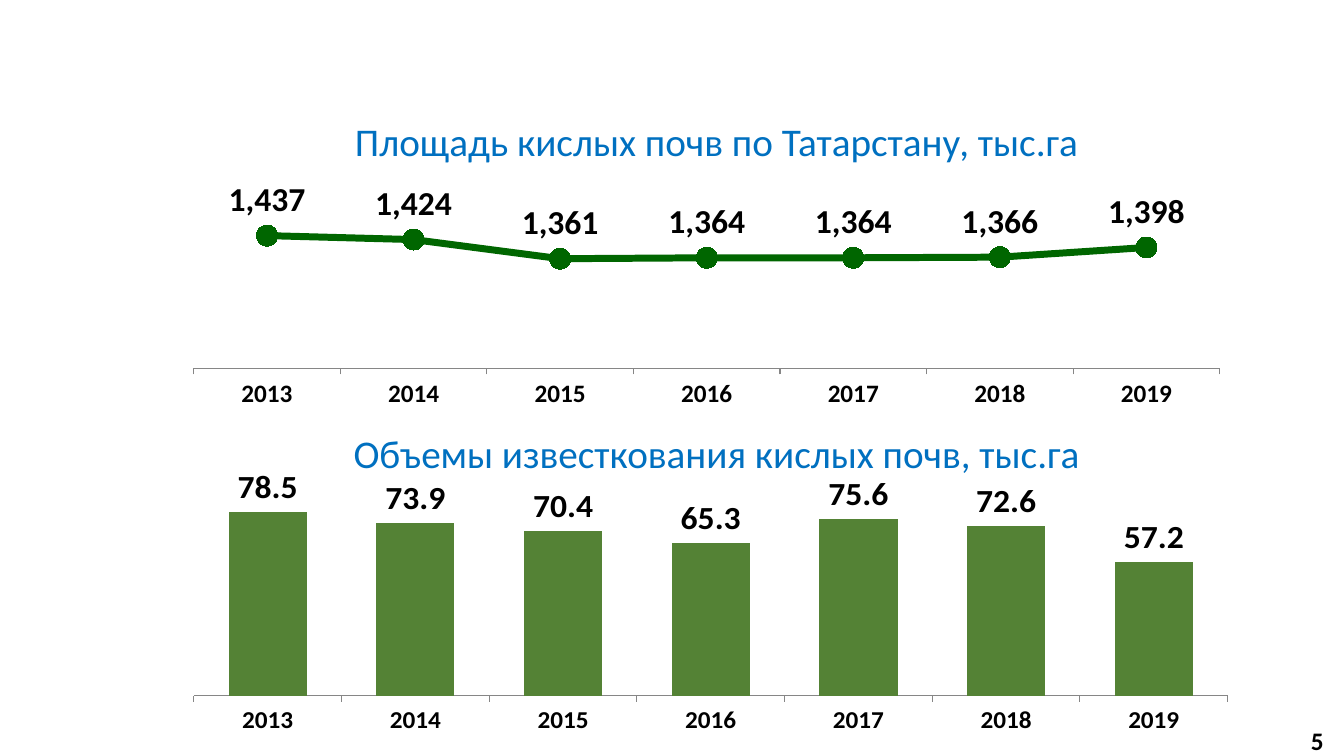
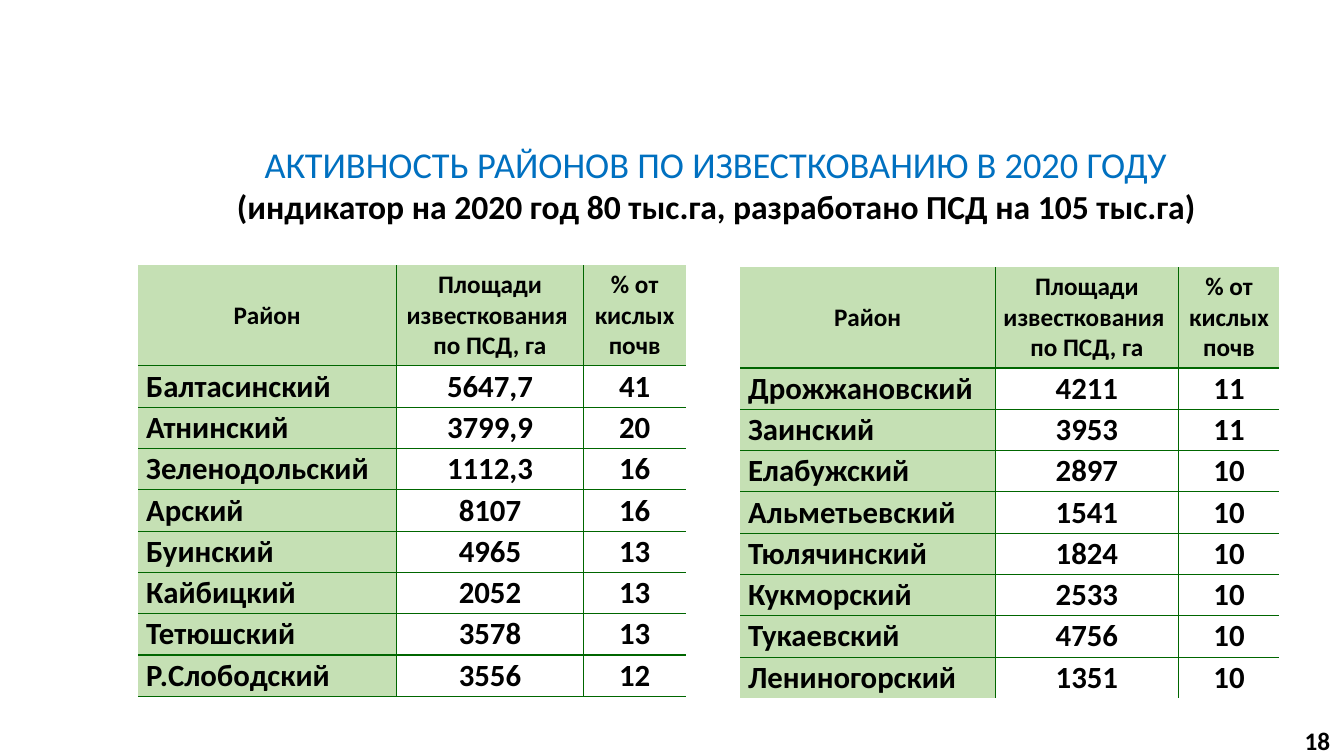
from lxml import etree
from pptx import Presentation
from pptx import util as u
from pptx.chart import data as chartdata
from pptx.dml import color
from pptx.enum import chart as charts, shapes, text
from pptx.oxml import ns

# Shared style
FONT = "Calibri"
BLACK = color.RGBColor(0x00, 0x00, 0x00)
BLUE = color.RGBColor(0x00, 0x70, 0xC0)
DARK_GREEN = color.RGBColor(0x00, 0x66, 0x00)
BAR_GREEN = color.RGBColor(0x54, 0x82, 0x35)
PALE_GREEN = color.RGBColor(0xC5, 0xE0, 0xB4)
AXIS_GRAY = color.RGBColor(0x86, 0x86, 0x86)
CENTER, LEFT = text.PP_ALIGN.CENTER, text.PP_ALIGN.LEFT
MIDDLE = text.MSO_ANCHOR.MIDDLE

# Content
YEARS = [str(year) for year in range(2013, 2020)]
ACID_AREAS = [1437, 1424, 1361, 1364, 1364, 1366, 1398]
LIMED_AREAS = [78.5, 73.9, 70.4, 65.3, 75.6, 72.6, 57.2]
HEADER = ("Район", "Площади известкования \vпо ПСД, га", "% от кислых почв")
LEADING_DISTRICTS = [
    ("Балтасинский", "5647,7", "41"),
    ("Атнинский", "3799,9", "20"),
    ("Зеленодольский", "1112,3", "16"),
    ("Арский", "8107", "16"),
    ("Буинский", "4965", "13"),
    ("Кайбицкий", "2052", "13"),
    ("Тетюшский", "3578", "13"),
    ("Р.Слободский", "3556", "12"),
]
OTHER_DISTRICTS = [
    ("Дрожжановский", "4211", "11"),
    ("Заинский", "3953", "11"),
    ("Елабужский", "2897", "10"),
    ("Альметьевский", "1541", "10"),
    ("Тюлячинский", "1824", "10"),
    ("Кукморский", "2533", "10"),
    ("Тукаевский", "4756", "10"),
    ("Лениногорский", "1351", "10"),
]


def style_font(font, size, tint=BLACK, bold=True):
    font.name, font.size, font.bold = FONT, u.Pt(size), bold
    font.color.rgb = tint


def write(para, words, size=18, tint=BLACK, bold=True, align=CENTER):
    para.text = words
    para.alignment = align
    for span in para.runs:
        style_font(span.font, size, tint, bold)


def set_insets(target, left, top, right, bottom):
    target.margin_left, target.margin_top = u.Inches(left), u.Inches(top)
    target.margin_right, target.margin_bottom = u.Inches(right), u.Inches(bottom)


def set_border(cell, side, drawn):
    properties = cell._tc.get_or_add_tcPr()
    line = etree.SubElement(properties, ns.qn("a:ln" + side), w=str(u.Pt(1)))
    if drawn:
        fill = etree.SubElement(line, ns.qn("a:solidFill"))
        etree.SubElement(fill, ns.qn("a:srgbClr"), val=str(DARK_GREEN))
    else:
        etree.SubElement(line, ns.qn("a:noFill"))


class Report:
    def __init__(self):
        self.deck = Presentation()
        self.deck.slide_width = u.Inches(13.33)
        self.deck.slide_height = u.Inches(7.5)
        self.page = None

    def new_page(self):
        self.page = self.deck.slides.add_slide(self.deck.slide_layouts[6])

    def title(self, top, height, words, size=28, subtitle=None):
        box = self.page.shapes.add_textbox(
            u.Inches(0.88), u.Inches(top), u.Inches(12.45), u.Inches(height))
        frame = box.text_frame
        frame.word_wrap = True
        write(frame.paragraphs[0], words, size=size, tint=BLUE, bold=False)
        if subtitle:
            frame.vertical_anchor = MIDDLE
            set_insets(frame, 0.1, 0, 0.1, 0)
            write(frame.add_paragraph(), subtitle, size=24)

    def page_number(self, number):
        box = self.page.shapes.add_shape(
            shapes.MSO_SHAPE.ROUNDED_RECTANGLE,
            u.Inches(12.84), u.Inches(7.2), u.Inches(0.45), u.Inches(0.3))
        box.adjustments[0] = 0
        box.shadow.inherit = False
        box.fill.background()
        box.line.fill.background()
        frame = box.text_frame
        frame.word_wrap = True
        frame.vertical_anchor = MIDDLE
        set_insets(frame, 0, 0.05, 0, 0.05)
        write(frame.paragraphs[0], str(number))

    def yearly_chart(self, kind, top, width, height, values, number_format,
                     label_position, low, high):
        source = chartdata.CategoryChartData()
        source.categories = YEARS
        source.add_series("Series 1", values)
        chart = self.page.shapes.add_chart(
            kind, u.Inches(1.71), u.Inches(top), u.Inches(width),
            u.Inches(height), source).chart
        chart.has_title = chart.has_legend = False
        style_font(chart.font, 16)

        # Axes
        scale = chart.value_axis
        scale.visible = scale.has_major_gridlines = False
        scale.minimum_scale, scale.maximum_scale = low, high
        years = chart.category_axis
        years.major_tick_mark = charts.XL_TICK_MARK.OUTSIDE
        years.format.line.color.rgb = AXIS_GRAY
        style_font(years.tick_labels.font, 18)

        # Value labels
        plot = chart.plots[0]
        plot.vary_by_categories = False
        labels = plot.series[0].data_labels
        labels.show_value = True
        labels.number_format = number_format
        labels.number_format_is_linked = False
        labels.position = label_position
        style_font(labels.font, 24)
        return plot

    def column_chart(self, top, width, height, values):
        plot = self.yearly_chart(
            charts.XL_CHART_TYPE.COLUMN_CLUSTERED, top, width, height, values,
            "#,##0.0", charts.XL_LABEL_POSITION.OUTSIDE_END, 0, 90)
        plot.gap_width = 89
        fill = plot.series[0].format.fill
        fill.solid()
        fill.fore_color.rgb = BAR_GREEN

    def line_chart(self, top, width, height, values):
        plot = self.yearly_chart(
            charts.XL_CHART_TYPE.LINE_MARKERS, top, width, height, values,
            "#,##0", charts.XL_LABEL_POSITION.ABOVE, 1000, 1600)
        series = plot.series[0]
        series.smooth = False
        series.format.line.color.rgb = DARK_GREEN
        series.format.line.width = u.Pt(5)
        marker = series.marker
        marker.style, marker.size = charts.XL_MARKER_STYLE.CIRCLE, 15
        marker.format.fill.solid()
        marker.format.fill.fore_color.rgb = DARK_GREEN
        marker.format.line.color.rgb = DARK_GREEN

    def district_table(self, left, top, widths, districts, closed):
        rows = [HEADER, *districts]
        heights = [1] + [0.41] * len(districts)
        table = self.page.shapes.add_table(
            len(rows), len(widths), u.Inches(left), u.Inches(top),
            u.Inches(sum(widths)), u.Inches(sum(heights))).table
        table.first_row = table.horz_banding = False
        for column, width in zip(table.columns, widths):
            column.width = u.Inches(width)
        for row, height in zip(table.rows, heights):
            row.height = u.Inches(height)

        last_row, last_column = len(rows) - 1, len(widths) - 1
        for r, values in enumerate(rows):
            for c, words in enumerate(values):
                cell = table.cell(r, c)
                is_header, is_name = r == 0, r > 0 and c == 0
                cell.vertical_anchor = MIDDLE
                set_insets(cell, 0.08 if is_name else 0.01, 0, 0.01, 0)
                write(cell.text_frame.paragraphs[0], words,
                      size=18 if is_header else 22,
                      align=LEFT if is_name else CENTER)
                # Inner lines only, plus the closing line where wanted
                set_border(cell, "L", c > 0)
                set_border(cell, "R", c < last_column)
                set_border(cell, "T", r > 0)
                set_border(cell, "B", r < last_row or closed)
                if is_header or is_name:
                    cell.fill.solid()
                    cell.fill.fore_color.rgb = PALE_GREEN
                else:
                    cell.fill.background()


def main():
    report = Report()

    # Acid soils and liming by year
    report.new_page()
    report.column_chart(4.65, 10.68, 2.69, LIMED_AREAS)
    report.line_chart(1.79, 10.6, 2.31, ACID_AREAS)
    report.page_number(5)
    report.title(4.21, 0.57, "Объемы известкования кислых почв, тыс.га")
    report.title(1.11, 0.57, "Площадь кислых почв по Татарстану, тыс.га")

    # Liming by district
    report.new_page()
    report.title(
        1.39, 0.87, "АКТИВНОСТЬ РАЙОНОВ ПО ИЗВЕСТКОВАНИЮ В 2020 ГОДУ", size=26,
        subtitle="(индикатор на 2020 год 80 тыс.га, разработано ПСД на 105 тыс.га)")
    report.page_number(18)
    report.district_table(1.37, 2.63, (2.56, 1.86, 1.01), LEADING_DISTRICTS, closed=True)
    report.district_table(7.34, 2.65, (2.53, 1.82, 1), OTHER_DISTRICTS, closed=False)

    report.deck.save("out.pptx")


if __name__ == "__main__":
    main()
